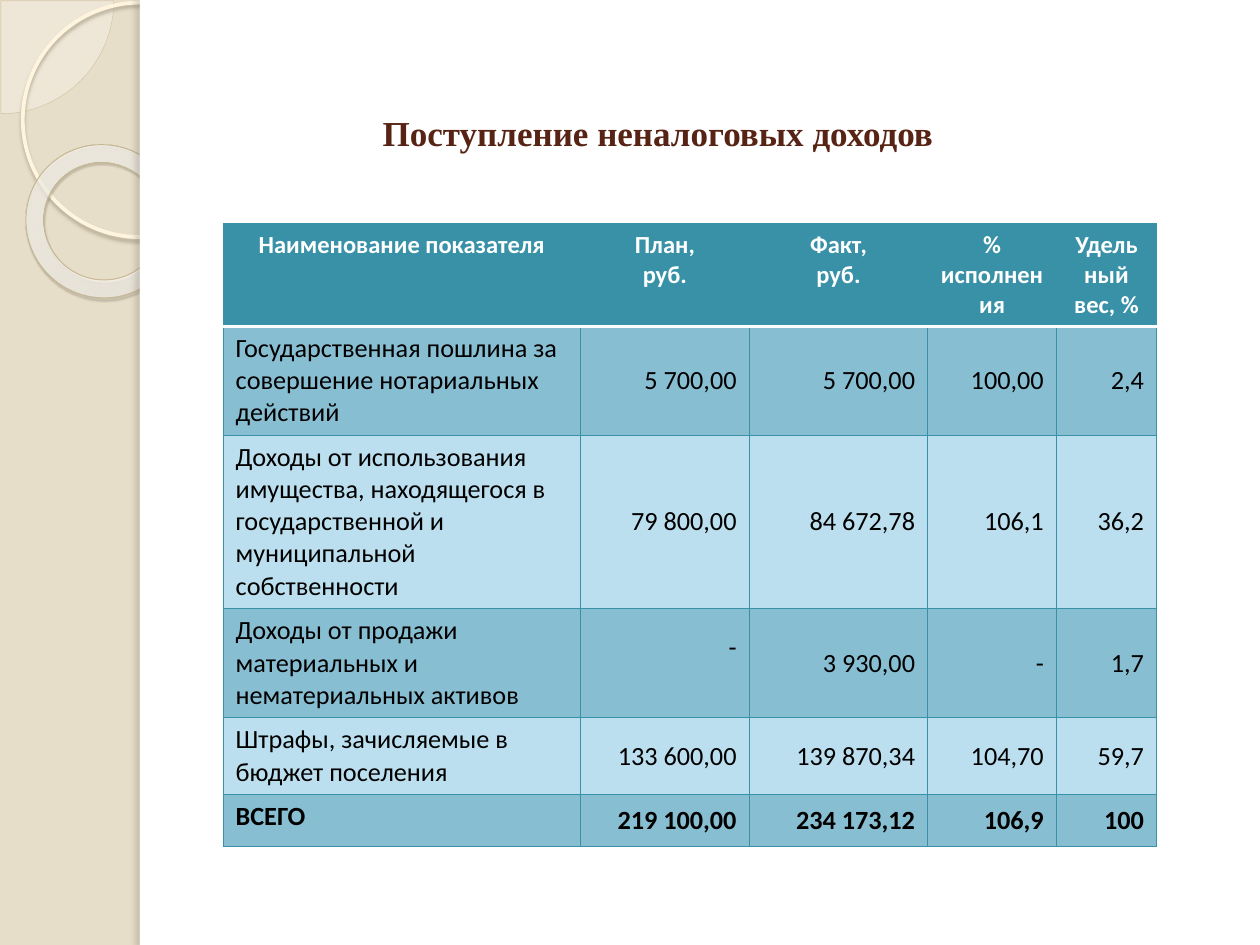
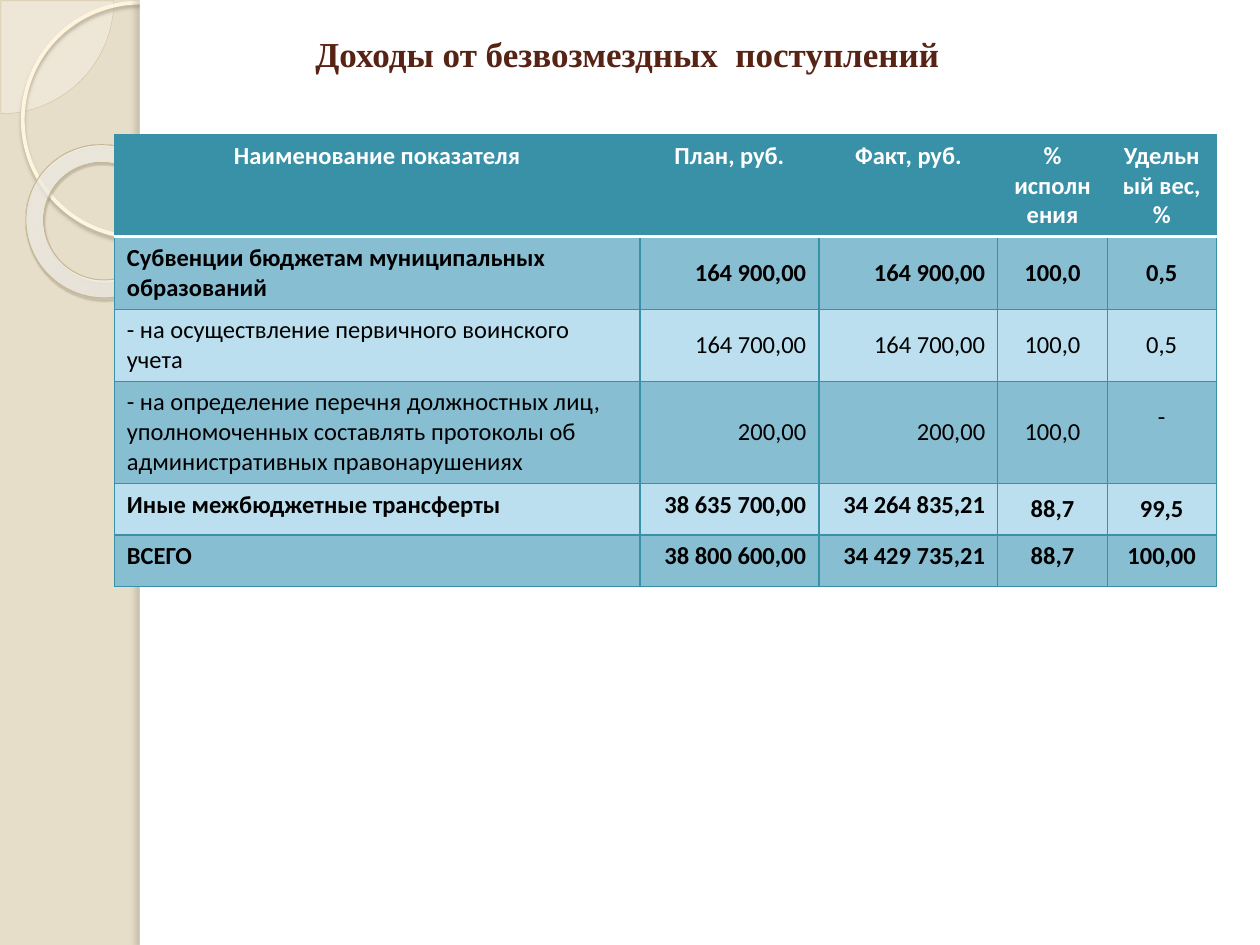
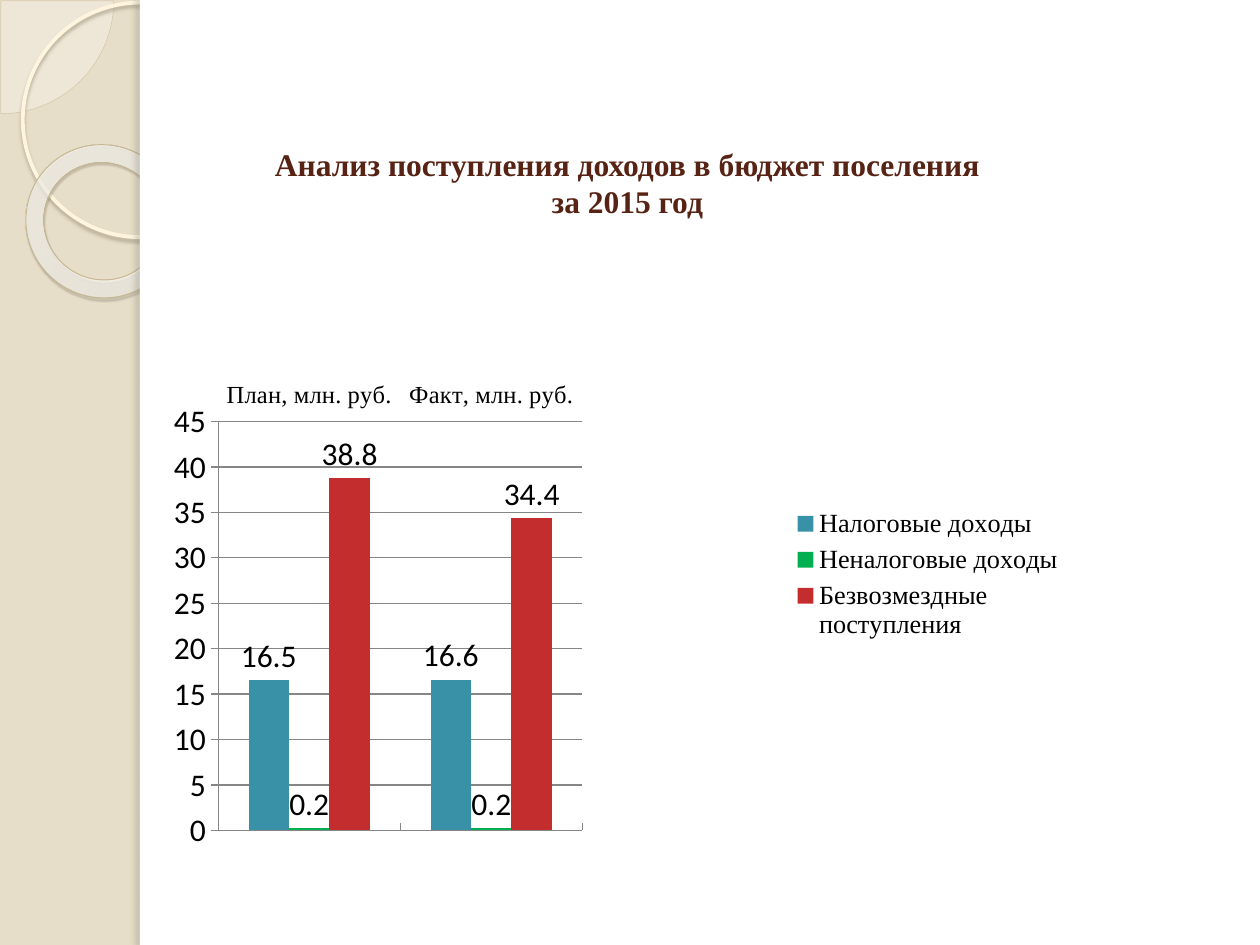
from dataclasses import dataclass

from lxml import etree
from pptx import Presentation
from pptx.chart.data import CategoryChartData
from pptx.dml.color import RGBColor
from pptx.enum.chart import (XL_CHART_TYPE, XL_LABEL_POSITION, XL_LEGEND_POSITION,
                             XL_TICK_LABEL_POSITION, XL_TICK_MARK)
from pptx.enum.shapes import MSO_SHAPE
from pptx.enum.text import MSO_ANCHOR, PP_ALIGN
from pptx.oxml import parse_xml
from pptx.oxml.ns import nsdecls, qn
from pptx.util import Pt

TOP, MIDDLE = MSO_ANCHOR.TOP, MSO_ANCHOR.MIDDLE
LEFT, CENTER, RIGHT = PP_ALIGN.LEFT, PP_ALIGN.CENTER, PP_ALIGN.RIGHT
PIE, OVAL, DONUT, RECTANGLE = MSO_SHAPE.PIE, MSO_SHAPE.OVAL, MSO_SHAPE.DONUT, MSO_SHAPE.RECTANGLE
TITLE_ONLY = 5


@dataclass(frozen=True)
class Theme:
    sand: str = "E7DEC9"
    white: str = "FFFFFF"
    black: str = "000000"
    brown: str = "572314"
    teal: str = "3891A7"
    dark_band: str = "88BED2"
    light_band: str = "BBDFEE"
    green: str = "00B050"
    red: str = "C32D2E"
    grid: str = "868686"
    cream: str = "FEFAF4"
    cream_edge: str = "D3C39F"
    ring: str = "FFF5DE"
    donut_edge: str = "C7B893"
    heading_font: str = "Times New Roman"
    body_font: str = "Calibri"
    title_size: float = 20
    small_title_size: float = 18
    header_size: float = 14
    wide_row_size: float = 15
    chart_size: float = 18
    legend_size: float = 15


THEME = Theme()


def rgb(color):
    return RGBColor.from_string(color)


def style_font(font, size, color, name=THEME.body_font, bold=False):
    font.size = Pt(size)
    font.name = name
    font.bold = bold
    font.color.rgb = rgb(color)


def add_ornament(slide, preset, box, fill=None, line=None, line_width=0.25):
    ornament = slide.shapes.add_shape(preset, *map(Pt, box))
    ornament.shadow.inherit = False
    if fill:
        ornament.fill.solid()
        ornament.fill.fore_color.rgb = rgb(fill)
    else:
        ornament.fill.background()
    if line:
        ornament.line.color.rgb = rgb(line)
        ornament.line.width = Pt(line_width)
    else:
        ornament.line.fill.background()
    return ornament


def cast_shadow(ornament, color, alpha, blur, distance, angle):
    effects = ornament.element.spPr.find(qn("a:effectLst"))
    effects.append(parse_xml(
        f'<a:outerShdw {nsdecls("a")} blurRad="{Pt(blur)}" dist="{Pt(distance)}" '
        f'dir="{angle * 60000}" algn="tl" rotWithShape="0"><a:srgbClr val="{color}">'
        f'<a:alpha val="{alpha * 1000}"/></a:srgbClr></a:outerShdw>'))


def fill_glow(ornament, stops):
    stop_xml = "".join(
        f'<a:gs pos="{position * 1000}"><a:srgbClr val="{color}">'
        f'<a:alpha val="{alpha * 1000}"/></a:srgbClr></a:gs>'
        for position, color, alpha in stops)
    glow = parse_xml(
        f'<a:gradFill {nsdecls("a")} rotWithShape="1"><a:gsLst>{stop_xml}</a:gsLst>'
        '<a:path path="circle"><a:fillToRect l="-408000" t="-50000" r="508000" b="150000"/>'
        '</a:path></a:gradFill>')
    properties = ornament.element.spPr
    properties.replace(properties.find(qn("a:noFill")), glow)


def decorate_layout(layout, slide):
    layout.background.fill.solid()
    layout.background.fill.fore_color.rgb = rgb(THEME.sand)

    corner = add_ornament(slide, PIE, (-64, -64, 129, 129), THEME.cream, THEME.cream_edge)
    corner.adjustments[0] = 0
    corner.adjustments[1] = 54
    corner_color = corner.element.spPr.find(qn("a:solidFill"))[0]
    etree.SubElement(corner_color, qn("a:alpha"), val="33000")

    ring = add_ornament(slide, OVAL, (13, 1.5, 134, 134), line=THEME.ring, line_width=2.15)
    cast_shadow(ring, "B0A68F", 85, 2, 2, 90)

    donut = add_ornament(slide, DONUT, (14.5, 83, 88.5, 87), line=THEME.donut_edge,
                         line_width=0.58)
    donut.adjustments[0] = 0.118
    donut.rotation = 38.6
    fill_glow(donut, [(0, "FFFCF6", 70), (70, "FFFEFB", 55), (100, "F0D28E", 60)])
    cast_shadow(donut, "5A5444", 35, 1, 1.2, 75)

    page = add_ornament(slide, RECTANGLE, (80, 0, 640, 540), THEME.white)
    page_edge = add_ornament(slide, RECTANGLE, (80, 0, 5.5, 540), THEME.white)
    cast_shadow(page_edge, "736F63", 25, 3, 3, 180)

    for position, ornament in enumerate((corner, ring, donut, page, page_edge), 2):
        layout.shapes.element.insert(position, ornament.element)


def set_title(slide, text, box, size=THEME.title_size, anchor=MIDDLE):
    title = slide.shapes.title
    title.left, title.top, title.width, title.height = map(Pt, box)
    frame = title.text_frame
    frame.text = text
    frame.word_wrap = True
    frame.vertical_anchor = anchor
    for paragraph in frame.paragraphs:
        paragraph.alignment = CENTER
        for run in paragraph.runs:
            style_font(run.font, size, THEME.brown, THEME.heading_font, True)


def set_borders(cell, row):
    sides = {side: (THEME.teal, 0.75) for side in ("lnL", "lnR", "lnT", "lnB")}
    if row < 2:
        sides["lnB" if row == 0 else "lnT"] = (THEME.white, 2)
    properties = cell._tc.get_or_add_tcPr()
    for position, (side, (color, width)) in enumerate(sides.items()):
        properties.insert(position, parse_xml(
            f'<a:{side} {nsdecls("a")} w="{Pt(width)}"><a:solidFill>'
            f'<a:srgbClr val="{color}"/></a:solidFill></a:{side}>'))


def fill_cell(cell, text, row, size, color, bold, alignment, anchor):
    cell.text_frame.text = text
    cell.vertical_anchor = anchor
    for paragraph in cell.text_frame.paragraphs:
        paragraph.alignment = alignment
        for run in paragraph.runs:
            style_font(run.font, size, color, bold=bold)
    band = THEME.dark_band if row % 2 else THEME.light_band
    cell.fill.solid()
    cell.fill.fore_color.rgb = rgb(band if row else THEME.teal)
    set_borders(cell, row)


def add_income_table(slide, origin, widths, heights, rows, size, alignments,
                     bold_rows, top_cells, raised_cell):
    table = slide.shapes.add_table(len(rows), len(widths), *map(Pt, origin),
                                   Pt(sum(widths)), Pt(sum(heights))).table
    for column, width in zip(table.columns, widths):
        column.width = Pt(width)
    for table_row, height in zip(table.rows, heights):
        table_row.height = Pt(height)
    for r, values in enumerate(rows):
        for c, text in enumerate(values):
            cell = table.cell(r, c)
            if r == 0:
                fill_cell(cell, text, r, THEME.header_size, THEME.white, True, CENTER, TOP)
            else:
                anchor = TOP if c == 0 or (r, c) in top_cells else MIDDLE
                fill_cell(cell, text, r, size, THEME.black, r in bold_rows,
                          alignments[c], anchor)
    table.cell(*raised_cell).margin_bottom = Pt(21)


def set_layout(chart, part, position, bounds, inner=False):
    parent = chart.element.find(".//" + qn(part))
    for old_layout in parent.findall(qn("c:layout")):
        parent.remove(old_layout)
    target = '<c:layoutTarget val="inner"/>' if inner else ""
    modes = '<c:xMode val="edge"/><c:yMode val="edge"/>'
    values = "".join(f'<c:{key} val="{value}"/>' for key, value in zip("xywh", bounds))
    parent.insert(position, parse_xml(
        f'<c:layout {nsdecls("c")}><c:manualLayout>{target}{modes}{values}'
        '</c:manualLayout></c:layout>'))


def style_axes(chart):
    categories, amounts = chart.category_axis, chart.value_axis
    categories.tick_label_position = XL_TICK_LABEL_POSITION.HIGH
    categories.major_tick_mark = XL_TICK_MARK.INSIDE
    style_font(categories.tick_labels.font, THEME.header_size, THEME.black, THEME.heading_font)
    amounts.minimum_scale, amounts.maximum_scale, amounts.major_unit = 0, 45, 5
    amounts.major_tick_mark = XL_TICK_MARK.OUTSIDE
    amounts.tick_labels.number_format = "General"
    amounts.tick_labels.number_format_is_linked = False
    amounts.has_major_gridlines = True
    for line in (categories.format.line, amounts.format.line,
                 amounts.major_gridlines.format.line):
        line.color.rgb = rgb(THEME.grid)
        line.width = Pt(0.75)


def add_income_chart(slide, box, categories, incomes):
    data = CategoryChartData(number_format="0.0")
    data.categories = categories
    for name, values, _ in incomes:
        data.add_series(name, values)
    chart = slide.shapes.add_chart(XL_CHART_TYPE.COLUMN_CLUSTERED, *map(Pt, box), data).chart
    style_font(chart.font, THEME.chart_size, THEME.black)
    chart.has_title = False
    style_axes(chart)

    plot = chart.plots[0]
    plot.gap_width, plot.overlap = 150, 0
    plot.vary_by_categories = False
    plot.has_data_labels = True
    labels = plot.data_labels
    labels.show_value = True
    labels.position = XL_LABEL_POSITION.OUTSIDE_END
    labels.number_format = "0.0"
    labels.number_format_is_linked = False
    for series, (_, _, color) in zip(plot.series, incomes):
        series.format.fill.solid()
        series.format.fill.fore_color.rgb = rgb(color)

    chart.has_legend = True
    chart.legend.position = XL_LEGEND_POSITION.RIGHT
    chart.legend.include_in_layout = False
    style_font(chart.legend.font, THEME.legend_size, THEME.black, THEME.heading_font)
    set_layout(chart, "c:plotArea", 0, (0.08, 0.24, 0.39, 0.71), inner=True)
    set_layout(chart, "c:legend", 1, (0.69, 0.38, 0.3, 0.25))


def build_non_tax_income(slide):
    set_title(slide, "Поступление неналоговых доходов", (99.5, 49, 553, 53))
    rows = [
        ("Наименование показателя", "План,\nруб.", "Факт,\nруб.", "% исполнения",
         "Удельный вес, %"),
        ("Государственная пошлина за совершение нотариальных действий",
         "5 700,00", "5 700,00", "100,00", "2,4"),
        ("Доходы от использования имущества, находящегося в государственной "
         "и муниципальной собственности", "79 800,00", "84 672,78", "106,1", "36,2"),
        ("Доходы от продажи материальных и нематериальных активов",
         "-", "3 930,00", "-", "1,7"),
        ("Штрафы, зачисляемые в бюджет поселения",
         "133 600,00", "139 870,34", "104,70", "59,7"),
        ("ВСЕГО", "219 100,00", "234 173,12", "106,9", "100"),
    ]
    add_income_table(slide, (127.5, 128), (204.2, 96.5, 102, 73.5, 57.3),
                     (58, 62, 99, 62, 44, 29.5), rows, THEME.wide_row_size,
                     (LEFT, RIGHT, RIGHT, RIGHT, RIGHT), {5}, set(), (3, 1))


def build_grants(slide):
    set_title(slide, "Доходы от безвозмездных  поступлений", (82, 9.5, 553, 42))
    rows = [
        ("Наименование показателя", "План, руб.", "Факт, руб.", "% исполнения",
         "Удельный вес, %"),
        ("Субвенции бюджетам муниципальных образований",
         "164 900,00", "164 900,00", "100,0", "0,5"),
        ("- на осуществление первичного воинского учета",
         "164 700,00", "164 700,00", "100,0", "0,5"),
        ("- на определение перечня должностных лиц, уполномоченных составлять "
         "протоколы об административных правонарушениях",
         "200,00", "200,00", "100,0", "-"),
        ("Иные межбюджетные трансферты", "38 635 700,00", "34 264 835,21", "88,7", "99,5"),
        ("ВСЕГО", "38 800 600,00", "34 429 735,21", "88,7", "100,00"),
    ]
    top_cells = {(4, 1), (4, 2)} | {(5, c) for c in range(1, 5)}
    add_income_table(slide, (65.3, 77), (300.4, 102.3, 102.3, 62.4, 62.4),
                     (58, 41, 41, 58, 29.5, 29.5), rows, THEME.header_size,
                     (LEFT, RIGHT, RIGHT, CENTER, CENTER), {1, 4, 5}, top_cells, (3, 4))


def build_income_analysis(slide):
    set_title(slide, "Анализ поступления доходов в бюджет поселения\vза 2015 год",
              (82, 79, 553, 64), THEME.small_title_size, TOP)
    add_income_chart(slide, (82, 162, 533.5, 329), ("План, млн. руб.", "Факт, млн. руб."), [
        ("Налоговые доходы", (16.5, 16.6), THEME.teal),
        ("Неналоговые доходы", (0.2, 0.2), THEME.green),
        ("Безвозмездные поступления", (38.8, 34.4), THEME.red),
    ])


def main():
    presentation = Presentation()
    presentation.slide_width, presentation.slide_height = Pt(720), Pt(540)
    layout = presentation.slide_layouts[TITLE_ONLY]
    builders = (build_non_tax_income, build_grants, build_income_analysis)
    slides = [presentation.slides.add_slide(layout) for _ in builders]
    decorate_layout(layout, slides[0])
    for build, slide in zip(builders, slides):
        build(slide)
    presentation.save("out.pptx")


if __name__ == "__main__":
    main()
